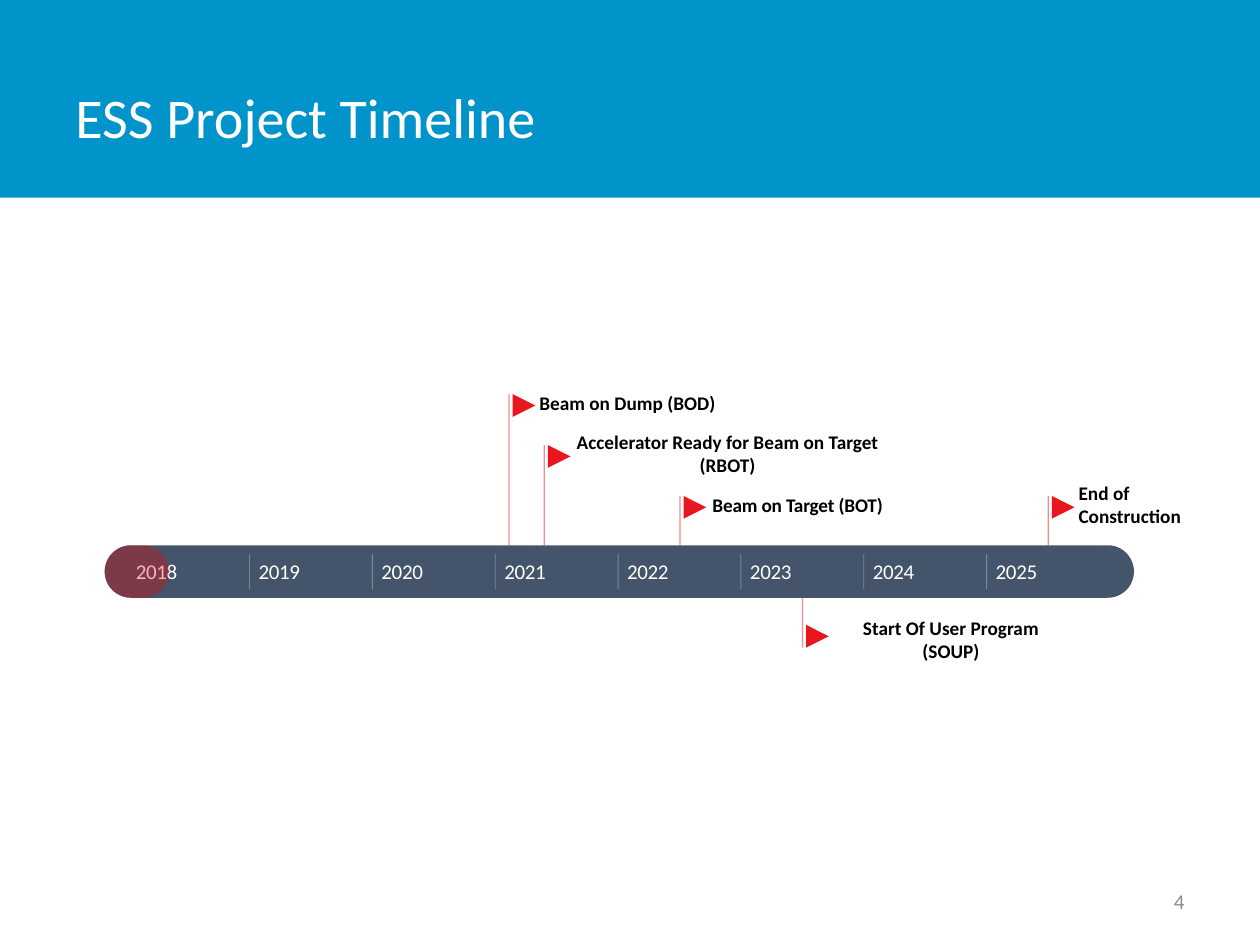
"""Build the ESS project timeline slide."""
from dataclasses import dataclass

from lxml import etree
from pptx import Presentation
from pptx.dml.color import RGBColor
from pptx.enum.shapes import MSO_CONNECTOR, MSO_SHAPE
from pptx.enum.text import MSO_ANCHOR, MSO_AUTO_SIZE, PP_ALIGN
from pptx.oxml.ns import qn
from pptx.util import Pt

LINE = MSO_CONNECTOR.STRAIGHT
RECT, ROUND, FLAG = MSO_SHAPE.RECTANGLE, MSO_SHAPE.ROUNDED_RECTANGLE, MSO_SHAPE.FLOWCHART_MERGE
MIDDLE = MSO_ANCHOR.MIDDLE
GROW, FIXED = MSO_AUTO_SIZE.SHAPE_TO_FIT_TEXT, MSO_AUTO_SIZE.NONE
LEFT, MID, RIGHT = PP_ALIGN.LEFT, PP_ALIGN.CENTER, PP_ALIGN.RIGHT


@dataclass(frozen=True)
class Theme:
    """Colours, font and type sizes."""
    font: str = "Calibri"
    head: str = "0094CA"
    bar: str = "44546A"
    flag: str = "EA161E"
    past: str = "FF0000"
    white: str = "FFFFFF"
    black: str = "000000"
    grey: str = "8C8C8C"
    title: float = 32
    year: float = 12
    label: float = 11
    page: float = 12


@dataclass(frozen=True)
class Box:
    """A place on the slide, in points."""
    x: float
    y: float
    w: float
    h: float

    def place(self) -> tuple:
        """Return the four lengths."""
        return Pt(self.x), Pt(self.y), Pt(self.w), Pt(self.h)


@dataclass(frozen=True)
class Event:
    """A flagged milestone: stem place, flag top and label."""
    x: float
    top: float
    end: float
    flag: float
    text: str
    box: Box
    align: PP_ALIGN = MID
    track: float = 0


THEME = Theme()
BAR = Box(59.8, 311.6, 588.2, 30)
PAST = Box(59.8, 311.6, 36.7, 30)
YEARS = range(2018, 2026)
STEP = 70.2
FIRST = 77.6
SIDE = 13

EVENTS = [
    Event(458.6, 341.6, 370.1, 357.1, "Start Of User Program (SOUP)", Box(475.9, 358.8, 135, 13.4)),
    Event(599, 283.4, 311.6, 283.4, "End of Construction", Box(616.3, 281.7, 90, 13.4), LEFT),
    Event(388.6, 283.4, 311.6, 283.4, "Beam on Target (BOT)", Box(405.8, 281.7, 100, 13.4), track=-0.1),
    Event(311, 254.3, 311.6, 254.3, "Accelerator Ready for Beam on Target (RBOT)",
          Box(328.3, 245.5, 175, 26.8)),
    Event(290.9, 225.2, 311.6, 225.2, "Beam on Dump (BOD)", Box(308.2, 223.4, 100.8, 13.4)),
]


def fade(fill, share: int) -> None:
    """Make a solid fill see-through, leaving a share in percent."""
    tint = fill.find(".//" + qn("a:srgbClr"))
    etree.SubElement(tint, qn("a:alpha")).set("val", str(share * 1000))


def shape(slide, kind: MSO_SHAPE, box: Box, color: str):
    """Add a flat filled shape."""
    item = slide.shapes.add_shape(kind, *box.place())
    item.shadow.inherit = False
    item.fill.solid()
    item.fill.fore_color.rgb = RGBColor.from_string(color)
    item.line.fill.background()
    return item


def line(slide, x: float, top: float, end: float, color: str, width: float, share: int) -> None:
    """Add an upright faded line."""
    item = slide.shapes.add_connector(LINE, Pt(x), Pt(top), Pt(x), Pt(end))
    item.line.color.rgb = RGBColor.from_string(color)
    item.line.width = Pt(width)
    props = item._element.spPr
    fade(props, share)
    etree.SubElement(props, qn("a:effectLst"))


def text(slide, words: str, box: Box, size: float, color: str, align: PP_ALIGN = LEFT,
         bold: bool = False, track: float = 0, wrap: bool = True, tight: bool = True,
         fit: MSO_AUTO_SIZE = FIXED) -> None:
    """Add a one-paragraph text box."""
    frame = slide.shapes.add_textbox(*box.place()).text_frame
    frame.text = words
    frame.word_wrap = wrap
    frame.auto_size = fit
    frame.vertical_anchor = MIDDLE
    if tight:
        frame.margin_left = frame.margin_right = frame.margin_top = frame.margin_bottom = 0
    para = frame.paragraphs[0]
    para.alignment = align
    run = para.runs[0]
    run.font.name = THEME.font
    run.font.size = Pt(size)
    run.font.bold = bold
    run.font.color.rgb = RGBColor.from_string(color)
    if track:
        run._r.get_or_add_rPr().set("spc", str(round(track * 100)))


def pill(slide, box: Box, color: str):
    """Add a shape with fully rounded ends."""
    item = shape(slide, ROUND, box, color)
    item.adjustments[0] = 0.5
    return item


def years(slide) -> None:
    """Add the year labels and the ticks between them."""
    for spot, year in enumerate(YEARS):
        x = FIRST + spot * STEP
        if spot:
            line(slide, x - 5.2, 316.6, 336.6, THEME.white, 0.5, 30)
        text(slide, str(year), Box(x, 319.2, 23.8, 14.4), THEME.year, THEME.white,
             track=-0.2, wrap=False)


def event(slide, item: Event) -> None:
    """Add the label and flag of a milestone."""
    text(slide, item.text, item.box, THEME.label, THEME.black, item.align, True,
         item.track, fit=GROW)
    flag = shape(slide, FLAG, Box(item.x + 2, item.flag, SIDE, SIDE), THEME.flag)
    flag.rotation = 270


def main() -> None:
    """Draw and save the slide."""
    deck = Presentation()
    deck.slide_width, deck.slide_height = Pt(720), Pt(540)
    slide = deck.slides.add_slide(deck.slide_layouts[6])
    shape(slide, RECT, Box(0, 0, 720, 113), THEME.head)
    text(slide, "ESS Project Timeline", Box(36, 21.6, 562.3, 90), THEME.title, THEME.white,
         tight=False)
    text(slide, "4", Box(516, 500.5, 168, 28.8), THEME.page, THEME.grey, RIGHT, tight=False)
    for item in EVENTS:
        line(slide, item.x, item.top, item.end, THEME.flag, 0.75, 50)
    pill(slide, BAR, THEME.bar)
    years(slide)
    for item in EVENTS:
        event(slide, item)
    fade(pill(slide, PAST, THEME.past)._element.spPr, 30)
    deck.save("out.pptx")


if __name__ == "__main__":
    main()
